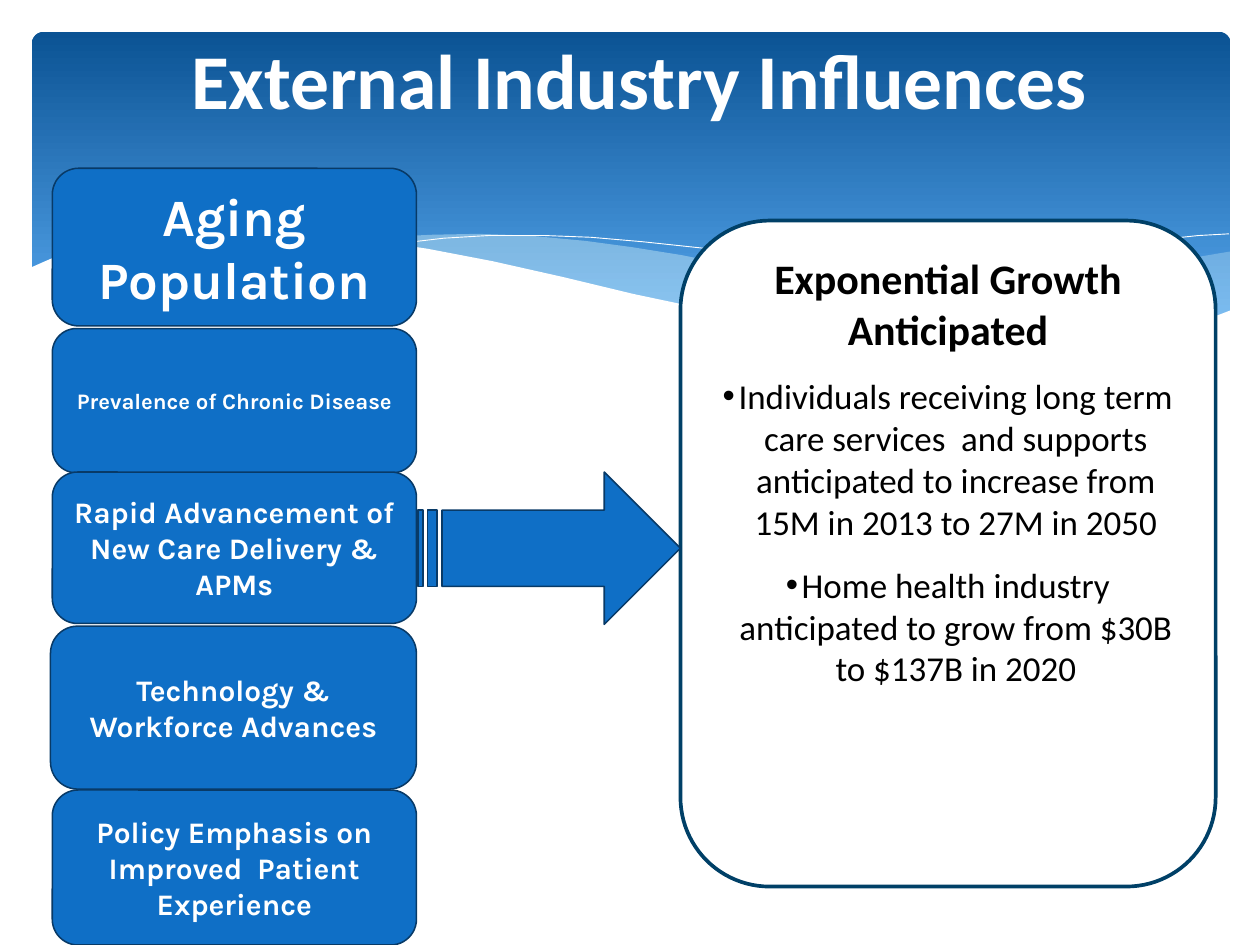
from lxml.etree import SubElement
from pptx import Presentation
from pptx.dml.color import RGBColor
from pptx.enum.shapes import MSO_SHAPE as SHAPE
from pptx.enum.text import MSO_ANCHOR as ANCHOR, PP_ALIGN as ALIGN
from pptx.oxml.ns import qn
from pptx.util import Inches, Pt

BLUE, DARK_BLUE, WHITE = "0F6FC6", "083A67", "FFFFFF"

UPPER_SWOOSH = [(13.88, 2.84), (13.29, 2.94), (12.68, 3.07), (12.24, 3.17), (11.45, 3.37),
                (10.72, 3.53), (10.04, 3.66), (9.41, 3.77), (10.02, 3.85), (10.59, 3.91),
                (11.11, 3.94), (11.58, 3.95), (12.14, 3.92), (12.65, 3.86), (13.1, 3.77),
                (13.5, 3.66), (13.88, 3.51)]
LOWER_SWOOSH = [(12.7, 3.88), (11.91, 3.77), (11.02, 3.62), (10.04, 3.41), (8.94, 3.15),
                (8.3, 3), (7.69, 2.88), (7.13, 2.79), (6.61, 2.72), (5.97, 2.66),
                (5.4, 2.64), (4.89, 2.65), (4.45, 2.67), (4.07, 2.72), (4.59, 2.79),
                (5.15, 2.88), (5.75, 3), (6.39, 3.15), (7.53, 3.42), (8.55, 3.63),
                (9.46, 3.79), (10.27, 3.89), (10.99, 3.95), (11.63, 3.96), (12.2, 3.94)]
LONG_STRAND = [(4.4, 2.78), (4.67, 2.73), (5.01, 2.69), (5.51, 2.66), (6.15, 2.66),
               (6.67, 2.68), (7.25, 2.73), (7.91, 2.8), (8.65, 2.9), (9.46, 3.03),
               (10.34, 3.21), (11.31, 3.43), (12.35, 3.71), (12.9, 3.86)]
SHORT_STRAND = [(8.72, 3.65), (9.28, 3.5), (9.89, 3.35), (10.63, 3.17), (11.46, 2.99),
                (12.32, 2.82), (12.74, 2.75), (13.14, 2.7), (13.52, 2.66), (13.87, 2.64)]
WHITE_WAVE = [(13.9, 3.5), (13.51, 3.65), (13.09, 3.77), (12.62, 3.86), (12.09, 3.91),
              (11.5, 3.93), (10.83, 3.91), (10.07, 3.84), (9.21, 3.73), (8.24, 3.55),
              (7.15, 3.32), (6.36, 3.13), (5.56, 2.95), (4.83, 2.81), (4.16, 2.71),
              (3.55, 2.65), (3, 2.62), (2.51, 2.61), (2.07, 2.63), (1.69, 2.66),
              (1.36, 2.71), (1.07, 2.77), (0.84, 2.83), (0.65, 2.89), (0.51, 2.95),
              (0.33, 3.03), (0.33, 4.68), (13.9, 4.68)]

INFLUENCES = [
    ("Aging Population", 42.7, (0.59, 1.9, 4.11, 1.78)),
    ("Prevalence of Chronic Disease", 18, (0.59, 3.71, 4.11, 1.63)),
    ("Rapid Advancement of New Care Delivery & APMs", 24.2, (0.59, 5.33, 4.11, 1.71)),
    ("Technology & Workforce Advances", 24.2, (0.57, 7.07, 4.13, 1.84)),
    ("Policy Emphasis on Improved  Patient Experience", 24.2, (0.59, 8.92, 4.11, 1.75)),
]
GROWTH_POINTS = [
    "Individuals receiving long term care services  and supports anticipated to increase "
    "from 15M in 2013 to 27M in 2050",
    "Home health industry anticipated to grow from $30B to $137B in 2020",
]


def rgb(hex_color):
    return RGBColor.from_string(hex_color)


def paint(shape, fill=None, line=None, width=1.25, opacity=None):
    """Set fill and outline; None means none, opacity is in percent."""
    shape.shadow.inherit = False
    if fill:
        shape.fill.solid()
        shape.fill.fore_color.rgb = rgb(fill)
        if opacity:
            color = shape.fill._xPr.find(qn("a:solidFill"))[0]
            SubElement(color, qn("a:alpha")).set("val", str(opacity * 1000))
    else:
        shape.fill.background()
    if line:
        shape.line.color.rgb = rgb(line)
        shape.line.width = Pt(width)
    else:
        shape.line.fill.background()


def add_box(slide, kind, place, **look):
    box = slide.shapes.add_shape(kind, *map(Inches, place))
    paint(box, **look)
    return box


def add_curve(slide, points, closed=True, **look):
    start, *rest = [(Inches(x), Inches(y)) for x, y in points]
    builder = slide.shapes.build_freeform(*start)
    builder.add_line_segments(rest, close=closed)
    paint(builder.convert_to_shape(), **look)


def set_frame(frame, anchor):
    settings = {"word_wrap": True, "vertical_anchor": anchor,
                "margin_left": Inches(0.14), "margin_right": Inches(0.14),
                "margin_top": Inches(0.07), "margin_bottom": Inches(0.07)}
    for name, value in settings.items():
        setattr(frame, name, value)


def write(paragraph, text, size, color, font="Calibri", bold=True):
    paragraph.alignment = ALIGN.CENTER
    run = paragraph.add_run()
    run.text = text
    run.font.color.rgb = rgb(color)
    for name, value in {"name": font, "size": Pt(size), "bold": bold}.items():
        setattr(run.font, name, value)


def add_bullet(paragraph):
    properties = paragraph._p.get_or_add_pPr()
    properties.set("marL", str(Inches(0.18)))
    properties.set("indent", str(Inches(-0.18)))
    SubElement(properties, qn("a:buFont")).set("typeface", "Arial")
    SubElement(properties, qn("a:buChar")).set("char", "•")


def add_banner(slide):
    banner = add_box(slide, SHAPE.ROUNDED_RECTANGLE, (0.36, 0.36, 13.53, 3.84))
    banner.adjustments[0] = 0.034
    banner.fill.gradient()
    banner.fill.gradient_angle = 270
    for stop, (position, color) in zip(banner.fill.gradient_stops,
                                       [(0, "0B5394"), (0.9, "59AAF2")]):
        stop.position = position
        stop.color.rgb = rgb(color)
    add_curve(slide, UPPER_SWOOSH, fill="DBF5F9", opacity=29)
    add_curve(slide, LOWER_SWOOSH, fill="DBF5F9", opacity=40)
    for strand in (LONG_STRAND, SHORT_STRAND):
        add_curve(slide, strand, closed=False, line=WHITE, width=0)
    add_curve(slide, WHITE_WAVE, fill=WHITE)


def add_title(slide, text):
    title = slide.shapes.add_textbox(*map(Inches, (0.71, 0.24, 13.01, 1.3))).text_frame
    set_frame(title, ANCHOR.MIDDLE)
    write(title.paragraphs[0], text, 63, WHITE)


def add_growth_panel(slide, heading, points):
    panel = add_box(slide, SHAPE.ROUNDED_RECTANGLE, (7.68, 2.49, 6.04, 7.52),
                    fill=WHITE, line="004067", width=3).text_frame
    set_frame(panel, ANCHOR.TOP)
    write(panel.paragraphs[0], heading, 34.1, "000000")
    for point in points:
        paragraph = panel.add_paragraph()
        write(paragraph, point, 28.4, "000000", bold=False)
    for paragraph in panel.paragraphs:
        paragraph.space_after = Pt(17.1)
    for paragraph in panel.paragraphs[1:]:
        add_bullet(paragraph)


def add_influence(slide, text, size, place):
    influence = add_box(slide, SHAPE.ROUNDED_RECTANGLE, place,
                        fill=BLUE, line=DARK_BLUE).text_frame
    set_frame(influence, ANCHOR.MIDDLE)
    write(influence.paragraphs[0], text, size, WHITE, font="Karla")


def main():
    deck = Presentation()
    deck.slide_width, deck.slide_height = Inches(14.22), Inches(10.67)
    slide = deck.slides.add_slide(deck.slide_layouts[6])
    add_banner(slide)
    add_title(slide, "External Industry Influences")
    add_growth_panel(slide, "Exponential Growth Anticipated", GROWTH_POINTS)
    for text, size, place in INFLUENCES:
        add_influence(slide, text, size, place)
    add_box(slide, SHAPE.STRIPED_RIGHT_ARROW, (4.72, 5.33, 2.96, 1.72),
            fill=BLUE, line=DARK_BLUE)
    deck.save("out.pptx")


if __name__ == "__main__":
    main()
